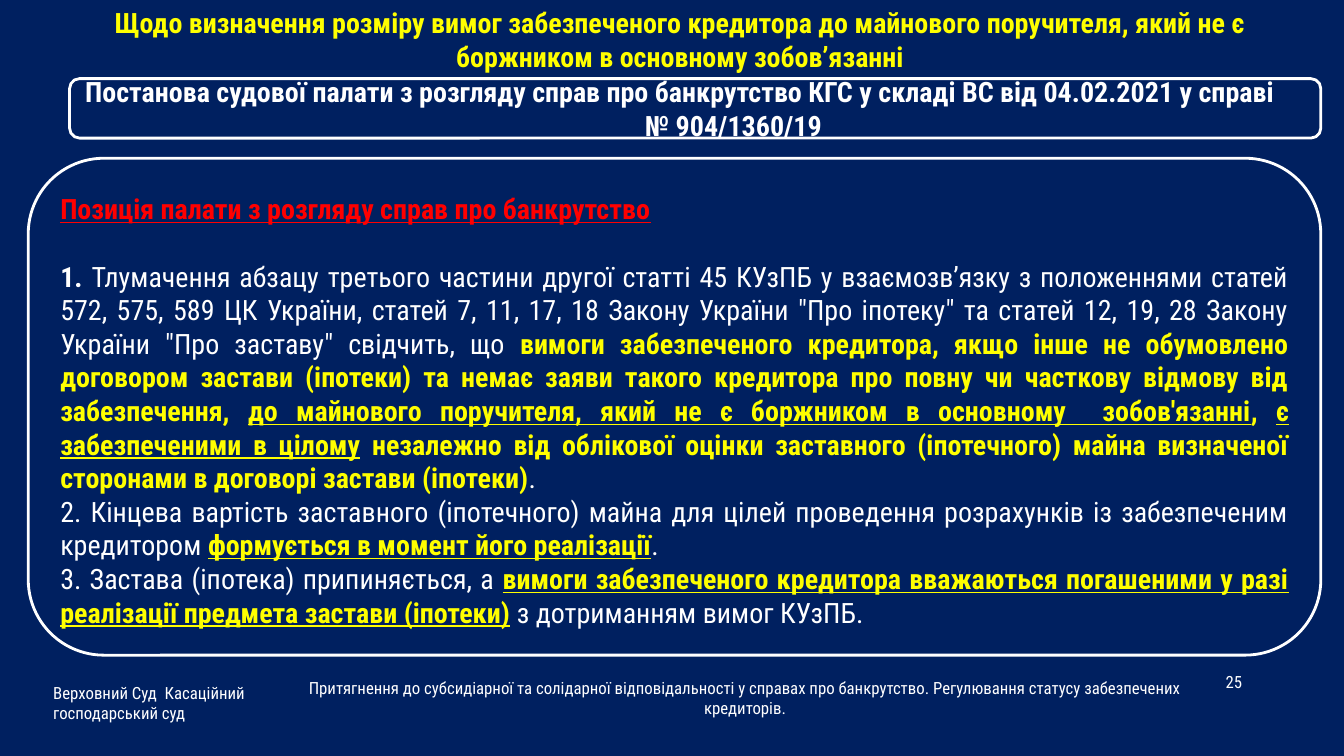
from pptx import Presentation
from pptx.dml.color import RGBColor
from pptx.enum.shapes import MSO_SHAPE as SHAPE
from pptx.enum.text import MSO_ANCHOR as ANCHOR, PP_ALIGN as ALIGN
from pptx.util import Inches, Pt

FONT = "Roboto Condensed"
NAVY, WHITE, YELLOW, RED = "002060", "FFFFFF", "FFFF00", "FF0000"

PLAIN = (WHITE, False, False)
NUMBER = (WHITE, True, False)
KEY = (YELLOW, True, False)
KEY_LINE = (YELLOW, True, True)
HEADING = (RED, True, True)

POSITION = [
    [("Позиція палати з розгляду справ про банкрутство", HEADING)],
    [("1. ", NUMBER),
     ("Тлумачення абзацу третього частини другої статті 45 КУзПБ у взаємозв’язку "
      "з положеннями статей 572, 575, 589 ЦК України, статей 7, 11, 17, 18 Закону "
      "України \"Про іпотеку\" та статей 12, 19, 28 Закону України \"Про заставу\" "
      "свідчить, що ", PLAIN),
     ("вимоги забезпеченого кредитора, якщо інше не обумовлено договором застави "
      "(іпотеки) та немає заяви такого кредитора про повну чи часткову відмову від "
      "забезпечення, ", KEY),
     ("до майнового поручителя, який не є боржником в основному  зобов'язанні", KEY_LINE),
     (", ", KEY),
     ("є забезпеченими в цілому", KEY_LINE),
     (" незалежно від облікової оцінки заставного (іпотечного) майна визначеної "
      "сторонами в договорі застави (іпотеки)", KEY),
     (".", PLAIN)],
    [("2. Кінцева вартість заставного (іпотечного) майна для цілей проведення "
      "розрахунків із забезпеченим кредитором ", PLAIN),
     ("формується в момент його реалізації", KEY_LINE),
     (".", PLAIN)],
    [("3. Застава (іпотека) припиняється, а ", PLAIN),
     ("вимоги забезпеченого кредитора вважаються погашеними у разі реалізації "
      "предмета застави (іпотеки)", KEY_LINE),
     (" з дотриманням вимог КУзПБ.", PLAIN)],
]


def rgb(value):
    """Turn a hex string into a colour."""
    return RGBColor.from_string(value)


def style(p, size, align):
    """Set the font, size and alignment of a paragraph."""
    p.alignment = align
    p.font.name = FONT
    p.font.size = Pt(size)


def write(tf, text, size, color, align, bold=False):
    """Write one uniform paragraph into a text frame."""
    tf.word_wrap = True
    p = tf.paragraphs[0]
    p.text = text
    style(p, size, align)
    p.font.bold = bold
    p.font.color.rgb = rgb(color)
    return p


def write_rich(tf, paragraphs, size):
    """Write justified paragraphs made of styled runs."""
    tf.word_wrap = True
    for i, runs in enumerate(paragraphs):
        p = tf.add_paragraph() if i else tf.paragraphs[0]
        style(p, size, ALIGN.JUSTIFY)
        for text, (color, bold, underline) in runs:
            r = p.add_run()
            r.text = text
            r.font.bold = bold
            r.font.underline = underline
            r.font.color.rgb = rgb(color)


def add_label(s, box, text, size, color, align, bold=False, anchor=ANCHOR.MIDDLE):
    """Add a text box with one paragraph."""
    tf = s.shapes.add_textbox(*map(Inches, box)).text_frame
    tf.vertical_anchor = anchor
    write(tf, text, size, color, align, bold)


def add_panel(s, box, radius):
    """Add an outlined rounded panel and return its text frame."""
    sp = s.shapes.add_shape(SHAPE.ROUNDED_RECTANGLE, *map(Inches, box))
    sp.adjustments[0] = radius
    sp.shadow.inherit = False
    sp.fill.solid()
    sp.fill.fore_color.rgb = rgb(NAVY)
    sp.line.color.rgb = rgb(WHITE)
    sp.line.width = Pt(2)
    tf = sp.text_frame
    tf.vertical_anchor = ANCHOR.MIDDLE
    return tf


def main():
    """Build the slide and save it."""
    prs = Presentation()
    prs.slide_width, prs.slide_height = Inches(13.33), Inches(7.5)
    s = prs.slides.add_slide(prs.slide_layouts[6])
    s.background.fill.solid()
    s.background.fill.fore_color.rgb = rgb(NAVY)

    add_label(s, (0.39, 0.01, 12.71, 0.77),
              "Щодо визначення розміру вимог забезпеченого кредитора до майнового "
              "поручителя, який не є боржником в основному зобов’язанні",
              20, YELLOW, ALIGN.CENTER, True, ANCHOR.TOP)

    tf = add_panel(s, (0.69, 0.78, 12.41, 0.59), 0.167)
    tf.margin_left, tf.margin_right = 0, Inches(0.3)
    p = write(tf, "Постанова судової палати з розгляду справ про банкрутство КГС у "
              "складі ВС від 04.02.2021 у справі\v№ 904/1360/19",
              20, WHITE, ALIGN.CENTER, True)
    hang = Inches(1.06)
    pPr = p._p.get_or_add_pPr()
    pPr.set("marL", str(hang))
    pPr.set("indent", str(-hang))

    tf = add_panel(s, (0.28, 1.57, 12.82, 4.93), 0.152)
    tf.margin_top = Inches(0.12)
    write_rich(tf, POSITION, 20)
    tf.paragraphs[0].space_after = Pt(24)

    add_label(s, (0.43, 6.6, 2.54, 0.75), "Верховний Суд  Касаційний господарський суд",
              12, WHITE, ALIGN.LEFT)
    add_label(s, (2.64, 6.7, 9.5, 0.45),
              "Притягнення до субсидіарної та солідарної відповідальності у справах про "
              "банкрутство. Регулювання статусу забезпечених кредиторів.",
              12, WHITE, ALIGN.CENTER)
    add_label(s, (9.42, 6.6, 3, 0.33), "25", 12, WHITE, ALIGN.RIGHT)
    prs.save("out.pptx")


if __name__ == "__main__":
    main()
